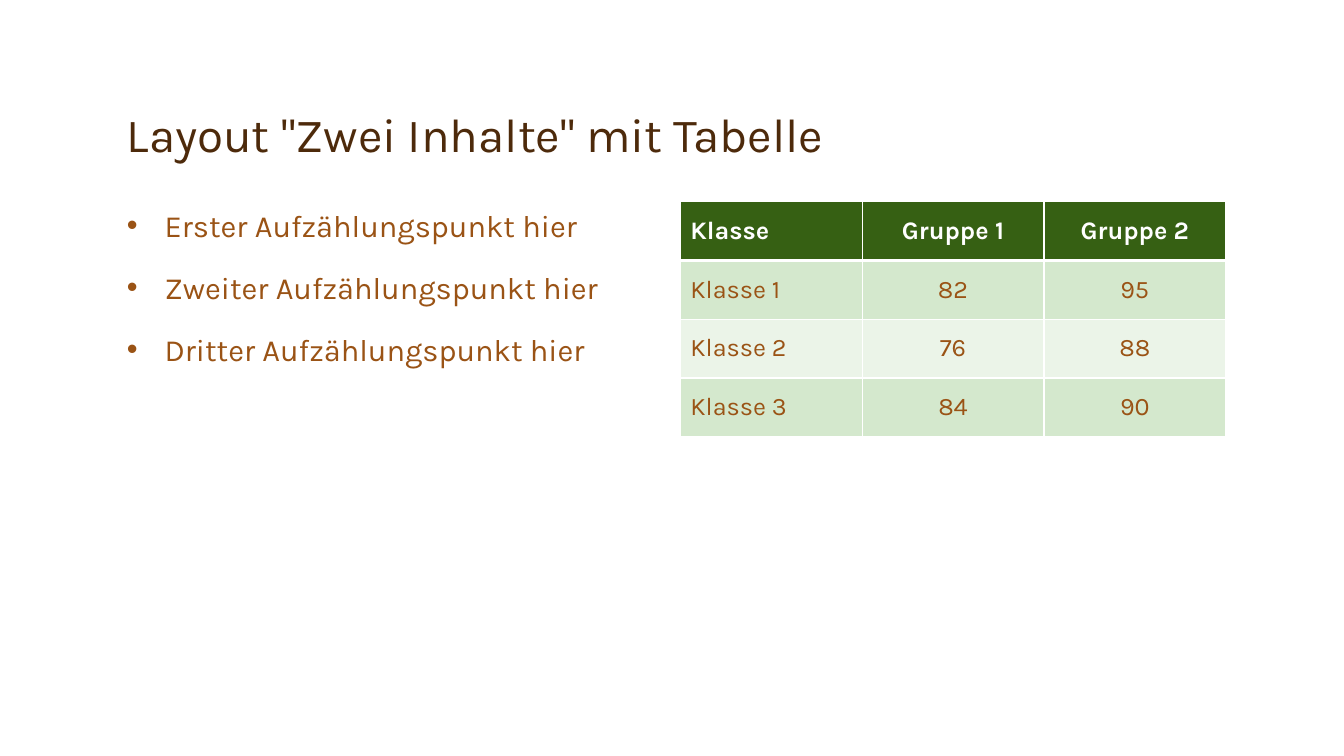
import pptx
import pptx.dml.color
import pptx.enum.text
import pptx.oxml
import pptx.oxml.ns
import pptx.util
from dataclasses import dataclass

Pt = pptx.util.Pt
Align = pptx.enum.text.PP_ALIGN
Anchor = pptx.enum.text.MSO_ANCHOR


@dataclass(frozen=True)
class Theme:
    font: str = "Karla"
    dark: str = "4D2A0B"
    brown: str = "9A5315"
    white: str = "FFFFFF"
    head: str = "366013"
    bands: tuple = ("D4E8CD", "EBF4E8")
    title: int = 34
    body: int = 22
    cell: int = 18


theme = Theme()


def color(code):
    return pptx.dml.color.RGBColor.from_string(code)


def apply(item, values):
    for name, value in values.items():
        setattr(item, name, value)


def style(para, text, size, code, bold=False, **values):
    para.text = text
    apply(para, values)
    apply(para.font, {"name": theme.font, "size": Pt(size), "bold": bold})
    para.font.color.rgb = color(code)


def frame(slide, box, anchor):
    shape = slide.shapes.add_textbox(*map(Pt, box))
    apply(shape.text_frame, {"word_wrap": True, "vertical_anchor": anchor})
    return shape.text_frame


def title(slide, text, box):
    area = frame(slide, box, Anchor.BOTTOM)
    style(area.paragraphs[0], text, theme.title, theme.dark, line_spacing=0.9)


def bullet(para, indent):
    props = para._p.get_or_add_pPr()
    props.set("marL", str(Pt(indent)))
    props.set("indent", str(-Pt(indent)))
    space = pptx.oxml.ns.nsdecls("a")
    props.append(pptx.oxml.parse_xml(f'<a:buFont {space} typeface="Arial"/>'))
    props.append(pptx.oxml.parse_xml(f'<a:buChar {space} char="•"/>'))


def points(slide, lines, box):
    area = frame(slide, box, Anchor.TOP)
    for index, line in enumerate(lines):
        para = area.paragraphs[0] if index == 0 else area.add_paragraph()
        bullet(para, 27)
        gap = Pt(18 if index else 0)
        style(para, line, theme.body, theme.brown, space_before=gap)


def border(cell, widths):
    props = cell._tc.get_or_add_tcPr()
    space = pptx.oxml.ns.nsdecls("a")
    for index, (side, width) in enumerate(widths.items()):
        props.insert(index, pptx.oxml.parse_xml(
            f'<a:ln{side} {space} w="{Pt(width)}"><a:solidFill>'
            f'<a:srgbClr val="{theme.white}"/></a:solidFill></a:ln{side}>'))


def grid(slide, rows, box):
    table = slide.shapes.add_table(len(rows), len(rows[0]), *map(Pt, box)).table
    for band in table.rows:
        band.height = Pt(box[3] / len(rows))
    for row, texts in enumerate(rows):
        head = row == 0
        fill = theme.head if head else theme.bands[(row - 1) % 2]
        ink = theme.white if head else theme.brown
        edges = {"L": 1, "R": 1, "T": 3 if row == 1 else 1, "B": 3 if head else 1}
        for col, text in enumerate(texts):
            cell = table.cell(row, col)
            cell.vertical_anchor = Anchor.MIDDLE
            cell.fill.solid()
            cell.fill.fore_color.rgb = color(fill)
            border(cell, edges)
            side = Align.CENTER if col else Align.LEFT
            style(cell.text_frame.paragraphs[0], text, theme.cell, ink, head,
                  alignment=side)


def main():
    """Build the slide with a title, bullet points and a table."""
    deck = pptx.Presentation()
    apply(deck, {"slide_width": Pt(960), "slide_height": Pt(540)})
    slide = deck.slides.add_slide(deck.slide_layouts[6])
    title(slide, 'Layout "Zwei Inhalte" mit Tabelle', (83.5, 24, 792, 96))
    points(slide, [f"{word} Aufzählungspunkt hier"
                   for word in ("Erster", "Zweiter", "Dritter")],
           (83.5, 144, 390, 181.5))
    grid(slide, [("Klasse", "Gruppe 1", "Gruppe 2"),
                 ("Klasse 1", "82", "95"),
                 ("Klasse 2", "76", "88"),
                 ("Klasse 3", "84", "90")], (486, 144, 389.5, 168))
    deck.save("out.pptx")


if __name__ == "__main__":
    main()
